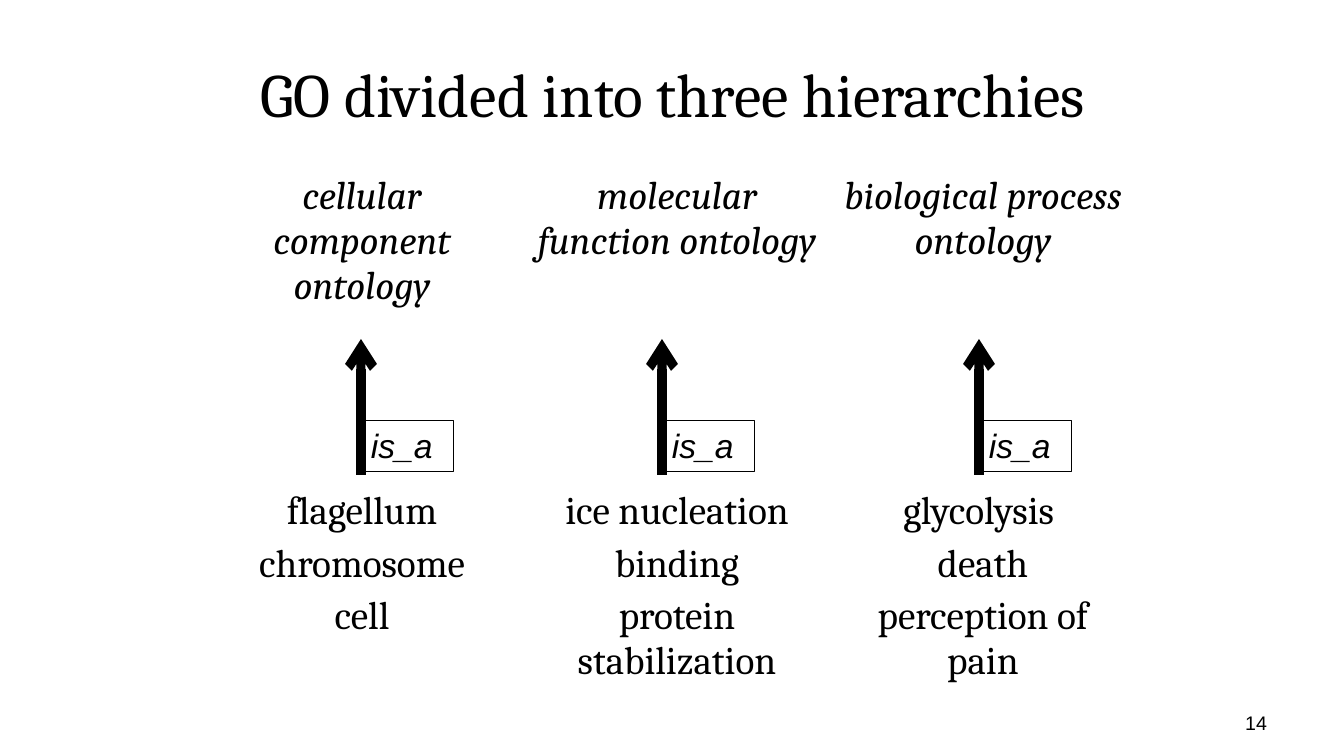
"""Build the slide on the three hierarchies of the Gene Ontology."""
from lxml.etree import SubElement
from pptx import Presentation
from pptx.dml.color import RGBColor
from pptx.enum.shapes import MSO_CONNECTOR, MSO_SHAPE
from pptx.enum.text import MSO_ANCHOR, PP_ALIGN
from pptx.oxml.ns import qn
from pptx.util import Emu, Pt

BLACK = "000000"
HIERARCHIES = [
    ("cellular component ontology", ["flagellum", "chromosome", "cell"], 320, 361),
    ("molecular function ontology", ["ice nucleation", "binding", "protein stabilization"], 310, 662),
    ("biological process ontology", ["glycolysis ", "death", "perception of pain"], 302, 979),
]


def px(n):
    return Emu(round(n * 914400 / 100.8))


def write(tf, lines, size, font, align, italic=False):
    tf.word_wrap = True
    tf.text = "\n".join(lines)
    for i, p in enumerate(tf.paragraphs):
        p.alignment = align
        if i:
            p.space_before = Pt(5.5)
        for r in p.runs:
            r.font.size = Pt(size)
            r.font.name = font
            r.font.italic = italic
            r.font.color.rgb = RGBColor.from_string(BLACK)


prs = Presentation()
prs.slide_width, prs.slide_height = px(1344), px(756)
s = prs.slides.add_slide(prs.slide_layouts[6])

number = s.shapes.add_textbox(px(964), px(706), px(313), px(35))
write(number.text_frame, ["14"], 14, "Arial", PP_ALIGN.RIGHT)

title = s.shapes.add_textbox(px(68), px(30), px(1210), px(126))
title.text_frame.vertical_anchor = MSO_ANCHOR.MIDDLE
write(title.text_frame, ["GO divided into three hierarchies"], 44, "Cambria", PP_ALIGN.CENTER)

table = s.shapes.add_table(2, 3, px(202), px(169), px(932), px(587)).table
table.first_row = table.horz_banding = False
table.rows[0].height, table.rows[1].height = px(209), px(378)
for col, (ontology, terms, width, x) in enumerate(HIERARCHIES):
    table.columns[col].width = px(width)
    for row, lines in enumerate([[ontology], terms]):
        cell = table.cell(row, col)
        cell.fill.background()
        cell.margin_top = px([5, 111][row])
        write(cell.text_frame, lines, 28, "Cambria", PP_ALIGN.CENTER, italic=row == 0)

    arrow = s.shapes.add_connector(MSO_CONNECTOR.STRAIGHT, px(x), px(339), px(x), px(475))
    arrow.line.width = Pt(6.5)
    arrow.line.color.rgb = RGBColor.from_string(BLACK)
    SubElement(arrow.line._get_or_add_ln(), qn("a:headEnd"), type="arrow")
    SubElement(arrow._element.spPr, qn("a:effectLst"))

    label = s.shapes.add_shape(MSO_SHAPE.RECTANGLE, px(x), px(420), px(92), px(51))
    label.shadow.inherit = False
    label.fill.background()
    label.line.width = Pt(0.55)
    label.line.color.rgb = RGBColor.from_string(BLACK)
    label.text_frame.vertical_anchor = MSO_ANCHOR.TOP
    write(label.text_frame, ["is_a"], 24, "Arial", PP_ALIGN.LEFT, italic=True)

prs.save("out.pptx")
